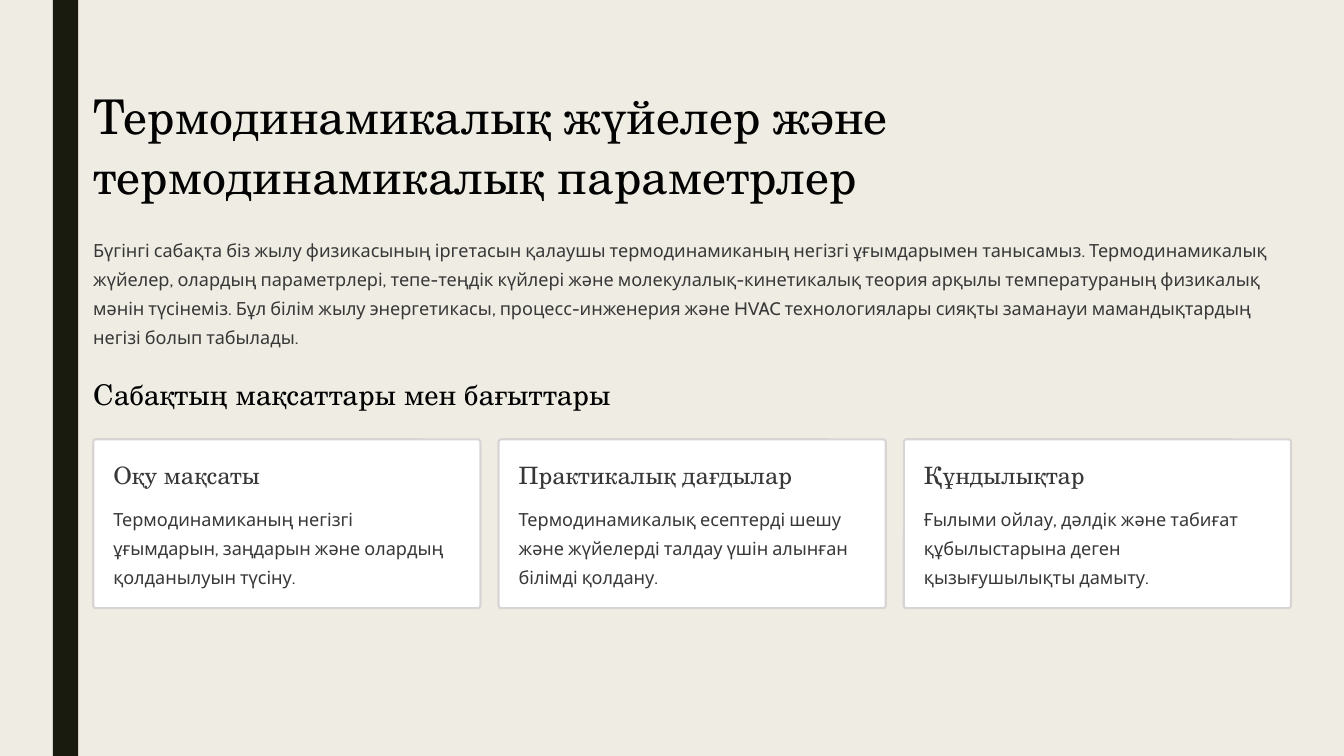
"""Build a lesson opening slide with three goal cards."""
from dataclasses import dataclass

from pptx import Presentation
from pptx.dml.color import RGBColor
from pptx.enum import shapes, text
from pptx.util import Inches, Pt


@dataclass(frozen=True)
class Theme:
    """Colours and type styles: font, size, line pitch, colour."""
    back: str = "EFEDE3"
    bar: str = "191B0E"
    card: str = "FFFFFF"
    edge: str = "D8D4D4"
    title: tuple = ("TeX Gyre Schola", 41, 51, "020202")
    head: tuple = ("TeX Gyre Schola", 24.5, 30.5, "020202")
    name: tuple = ("TeX Gyre Schola", 20.5, 25.5, "383838")
    body: tuple = ("Cabin", 15.5, 25, "383838")


THEME = Theme()
LEFT, WIDE = 1.11, 14.26
CARD_TOP, CARD_WIDE, CARD_HIGH = 5.23, 4.61, 2.01
GAP = (WIDE - 3 * CARD_WIDE) / 2
PAD = 0.24
TITLE = "Термодинамикалық жүйелер және термодинамикалық параметрлер"
INTRO = (
    "Бүгінгі сабақта біз жылу физикасының іргетасын қалаушы термодинамиканың "
    "негізгі ұғымдарымен танысамыз. Термодинамикалық жүйелер, олардың параметрлері, "
    "тепе-теңдік күйлері және молекулалық-кинетикалық теория арқылы температураның "
    "физикалық мәнін түсінеміз. Бұл білім жылу энергетикасы, процесс-инженерия және "
    "HVAC технологиялары сияқты заманауи мамандықтардың негізі болып табылады."
)
HEAD = "Сабақтың мақсаттары мен бағыттары"
CARDS = [
    ("Оқу мақсаты",
     "Термодинамиканың негізгі ұғымдарын, заңдарын және олардың қолданылуын түсіну."),
    ("Практикалық дағдылар",
     "Термодинамикалық есептерді шешу және жүйелерді талдау үшін алынған білімді қолдану."),
    ("Құндылықтар",
     "Ғылыми ойлау, дәлдік және табиғат құбылыстарына деген қызығушылықты дамыту."),
]


def apply(item, form):
    """Set every attribute in a dict of format values."""
    for key, value in form.items():
        setattr(item, key, value)


def color(code):
    """Turn a hex code into a colour."""
    return RGBColor.from_string(code)


def write(frame, words, style, wrap=True):
    """Fill a text frame with one styled paragraph."""
    font, size, pitch, ink = style
    apply(frame, {
        "text": words, "word_wrap": wrap,
        "auto_size": text.MSO_AUTO_SIZE.NONE,
        "vertical_anchor": text.MSO_ANCHOR.TOP,
        "margin_left": 0, "margin_top": 0, "margin_right": 0, "margin_bottom": 0,
    })
    para = frame.paragraphs[0]
    apply(para, {"alignment": text.PP_ALIGN.LEFT, "line_spacing": Pt(pitch),
                 "space_before": Pt(0), "space_after": Pt(0)})
    run = para.runs[0]
    apply(run.font, {"name": font, "size": Pt(size), "bold": False})
    run.font.color.rgb = color(ink)


def label(slide, box, words, style, wrap=True):
    """Add a text box."""
    area = slide.shapes.add_textbox(*map(Inches, box))
    write(area.text_frame, words, style, wrap)


def block(slide, kind, box, fill, edge=None):
    """Add a filled shape with an optional outline."""
    shape = slide.shapes.add_shape(kind, *map(Inches, box))
    shape.shadow.inherit = False
    shape.fill.solid()
    shape.fill.fore_color.rgb = color(fill)
    if edge:
        shape.line.color.rgb = color(edge)
        shape.line.width = Pt(1.8)
    else:
        shape.line.fill.background()
    return shape


def card(slide, left, name, words):
    """Add a goal card with its name and text."""
    box = (left, CARD_TOP, CARD_WIDE, CARD_HIGH)
    panel = block(slide, shapes.MSO_SHAPE.ROUNDED_RECTANGLE, box, THEME.card, THEME.edge)
    panel.adjustments[0] = 0.016
    inner, wide = left + PAD, CARD_WIDE - 2 * PAD
    label(slide, (inner, CARD_TOP + PAD, wide, 0.36), name, THEME.name, False)
    label(slide, (inner, 5.96, wide, 1.04), words, THEME.body)


def main():
    """Build and save the slide."""
    deck = Presentation()
    apply(deck, {"slide_width": Inches(16), "slide_height": Inches(9)})
    slide = deck.slides.add_slide(deck.slide_layouts.get_by_name("Title Only"))
    slide.background.fill.solid()
    slide.background.fill.fore_color.rgb = color(THEME.back)
    block(slide, shapes.MSO_SHAPE.RECTANGLE, (0.63, 0, 0.3, 9), THEME.bar)
    title = slide.shapes.title
    apply(title, {"left": Inches(LEFT), "top": Inches(1.01),
                  "width": Inches(WIDE), "height": Inches(1.42)})
    write(title.text_frame, TITLE, THEME.title)
    label(slide, (LEFT, 2.76, WIDE, 1.39), INTRO, THEME.body)
    label(slide, (LEFT, 4.47, 6.07, 0.43), HEAD, THEME.head, False)
    for spot, (name, words) in enumerate(CARDS):
        card(slide, LEFT + spot * (CARD_WIDE + GAP), name, words)
    deck.save("out.pptx")


if __name__ == "__main__":
    main()
